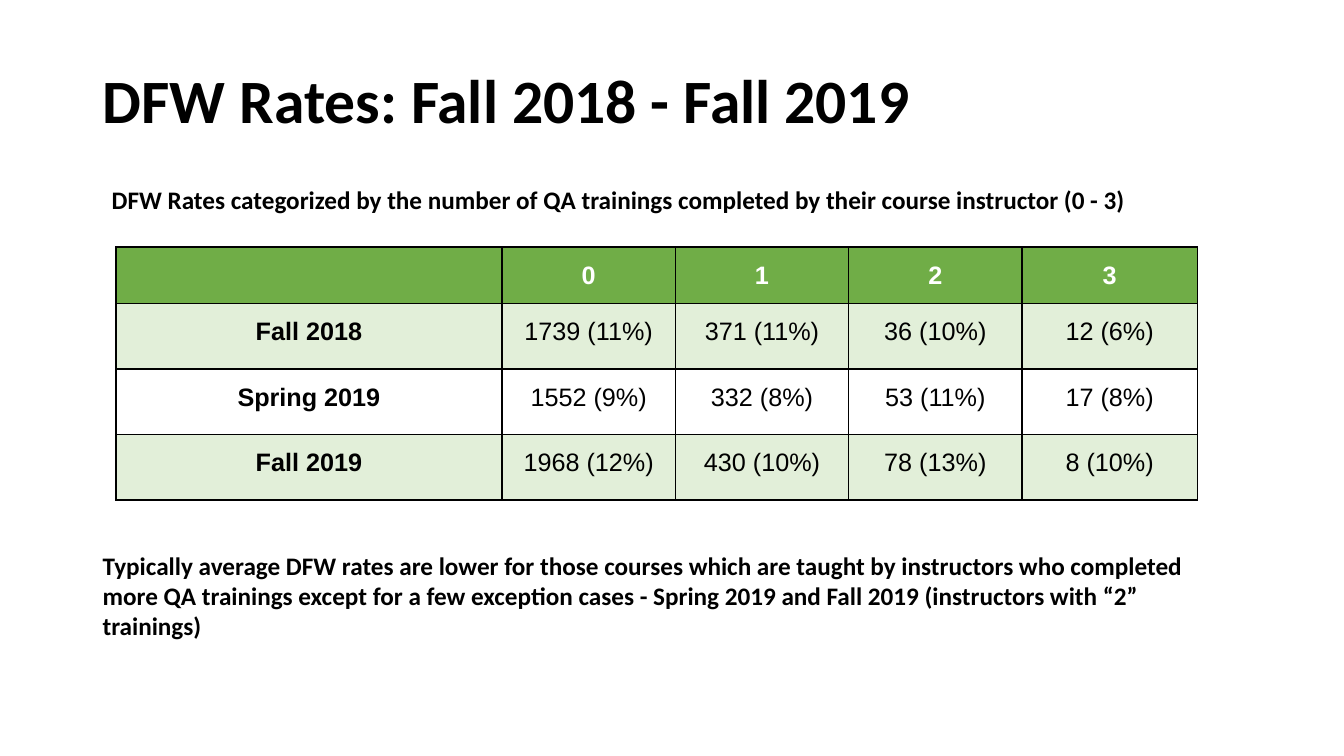
"""Build the slide of DFW rates by number of QA trainings."""
from dataclasses import dataclass

from lxml.etree import SubElement
from pptx import Presentation
from pptx.dml.color import RGBColor
from pptx.enum.text import MSO_ANCHOR, MSO_AUTO_SIZE, PP_ALIGN
from pptx.oxml.ns import qn
from pptx.shapes.base import BaseShape
from pptx.slide import Slide
from pptx.table import _Cell as Cell
from pptx.text.text import _Paragraph as Paragraph
from pptx.util import Pt

BLACK = RGBColor(0x00, 0x00, 0x00)
WHITE = RGBColor(0xFF, 0xFF, 0xFF)
GREEN = RGBColor(0x70, 0xAD, 0x47)
PALE_GREEN = RGBColor(0xE2, 0xEF, 0xD9)

COLUMN_WIDTHS = (275.76, 123.84, 123.84, 123.84, 125.28)
HEADER_HEIGHT = 40.32
ROW_HEIGHT = 46.8


@dataclass(frozen=True)
class TextBlock:
    text: str
    left: float
    top: float
    width: float
    height: float
    size: float = 18
    vertical_inset: float = 7.2


@dataclass(frozen=True)
class RateRow:
    values: tuple[str, ...]
    fill: RGBColor | None
    color: RGBColor = BLACK
    bold_values: bool = False


TITLE = TextBlock("DFW Rates: Fall 2018 - Fall 2019", 66.24, 21.6, 828, 104.4, 44, 3.6)
NOTES = (
    TextBlock(
        "DFW Rates categorized by the number of QA trainings completed "
        "by their course instructor (0 - 3)",
        72.72, 124.56, 783.36, 44.64,
    ),
    TextBlock(
        "Typically average DFW rates are lower for those courses which are taught by "
        "instructors who completed more QA trainings except for a few exception cases - "
        "Spring 2019 and Fall 2019 (instructors with “2” trainings)",
        66.24, 385.92, 828, 79.2,
    ),
)
RATES = (
    RateRow(("", "0", "1", "2", "3"), GREEN, WHITE, True),
    RateRow(("Fall 2018", "1739 (11%)", "371 (11%)", "36 (10%)", "12 (6%)"), PALE_GREEN),
    RateRow(("Spring 2019", "1552 (9%)", "332 (8%)", "53 (11%)", "17 (8%)"), None),
    RateRow(("Fall 2019", "1968 (12%)", "430 (10%)", "78 (13%)", "8 (10%)"), PALE_GREEN),
)


def format_text(
    paragraph: Paragraph, name: str, size: float, color: RGBColor, bold: bool
) -> None:
    font = paragraph.font
    font.name, font.size, font.bold = name, Pt(size), bold
    font.color.rgb = color
    for run in paragraph.runs:
        run.font.name, run.font.size, run.font.bold = name, Pt(size), bold
        run.font.color.rgb = color


def fill_block(shape: BaseShape, block: TextBlock) -> None:
    shape.left, shape.top = Pt(block.left), Pt(block.top)
    shape.width, shape.height = Pt(block.width), Pt(block.height)
    frame = shape.text_frame
    frame.text = block.text
    frame.word_wrap = True
    frame.auto_size = MSO_AUTO_SIZE.NONE
    frame.margin_left = frame.margin_right = Pt(7.2)
    frame.margin_top = frame.margin_bottom = Pt(block.vertical_inset)
    paragraph = frame.paragraphs[0]
    paragraph.alignment = PP_ALIGN.LEFT
    format_text(paragraph, "Calibri", block.size, BLACK, True)


def add_borders(cell: Cell) -> None:
    properties = cell._tc.get_or_add_tcPr()
    for side in ("a:lnL", "a:lnR", "a:lnT", "a:lnB"):
        line = SubElement(properties, qn(side), w=str(Pt(1)))
        fill = SubElement(line, qn("a:solidFill"))
        SubElement(fill, qn("a:srgbClr"), val=str(BLACK))


def fill_cell(cell: Cell, text: str, row: RateRow, bold: bool) -> None:
    add_borders(cell)
    if row.fill is None:
        cell.fill.background()
    else:
        cell.fill.solid()
        cell.fill.fore_color.rgb = row.fill
    cell.margin_left = cell.margin_right = Pt(5.04)
    cell.margin_top = cell.margin_bottom = Pt(7.2)
    cell.text_frame.text = text
    paragraph = cell.text_frame.paragraphs[0]
    paragraph.alignment = PP_ALIGN.CENTER
    paragraph.line_spacing = 1.15
    format_text(paragraph, "Arial", 18, row.color, bold)


def add_rates_table(slide: Slide) -> None:
    heights = (HEADER_HEIGHT,) + (ROW_HEIGHT,) * (len(RATES) - 1)
    table = slide.shapes.add_table(
        len(RATES), len(COLUMN_WIDTHS), Pt(82.8), Pt(176.4),
        Pt(sum(COLUMN_WIDTHS)), Pt(sum(heights)),
    ).table
    table.horz_banding = False
    for column, width in zip(table.columns, COLUMN_WIDTHS):
        column.width = Pt(width)
    for table_row, height, rate in zip(table.rows, heights, RATES):
        table_row.height = Pt(height)
        for index, (cell, text) in enumerate(zip(table_row.cells, rate.values)):
            fill_cell(cell, text, rate, index == 0 or rate.bold_values)


def main() -> None:
    presentation = Presentation()
    presentation.slide_width, presentation.slide_height = Pt(960), Pt(540)
    slide = presentation.slides.add_slide(presentation.slide_layouts.get_by_name("Title Only"))
    title = slide.shapes.title
    fill_block(title, TITLE)
    title.text_frame.vertical_anchor = MSO_ANCHOR.MIDDLE
    title.text_frame.paragraphs[0].line_spacing = 0.9
    subtitle, conclusion = NOTES
    fill_block(slide.shapes.add_textbox(0, 0, 0, 0), subtitle)
    add_rates_table(slide)
    fill_block(slide.shapes.add_textbox(0, 0, 0, 0), conclusion)
    presentation.save("out.pptx")


if __name__ == "__main__":
    main()
